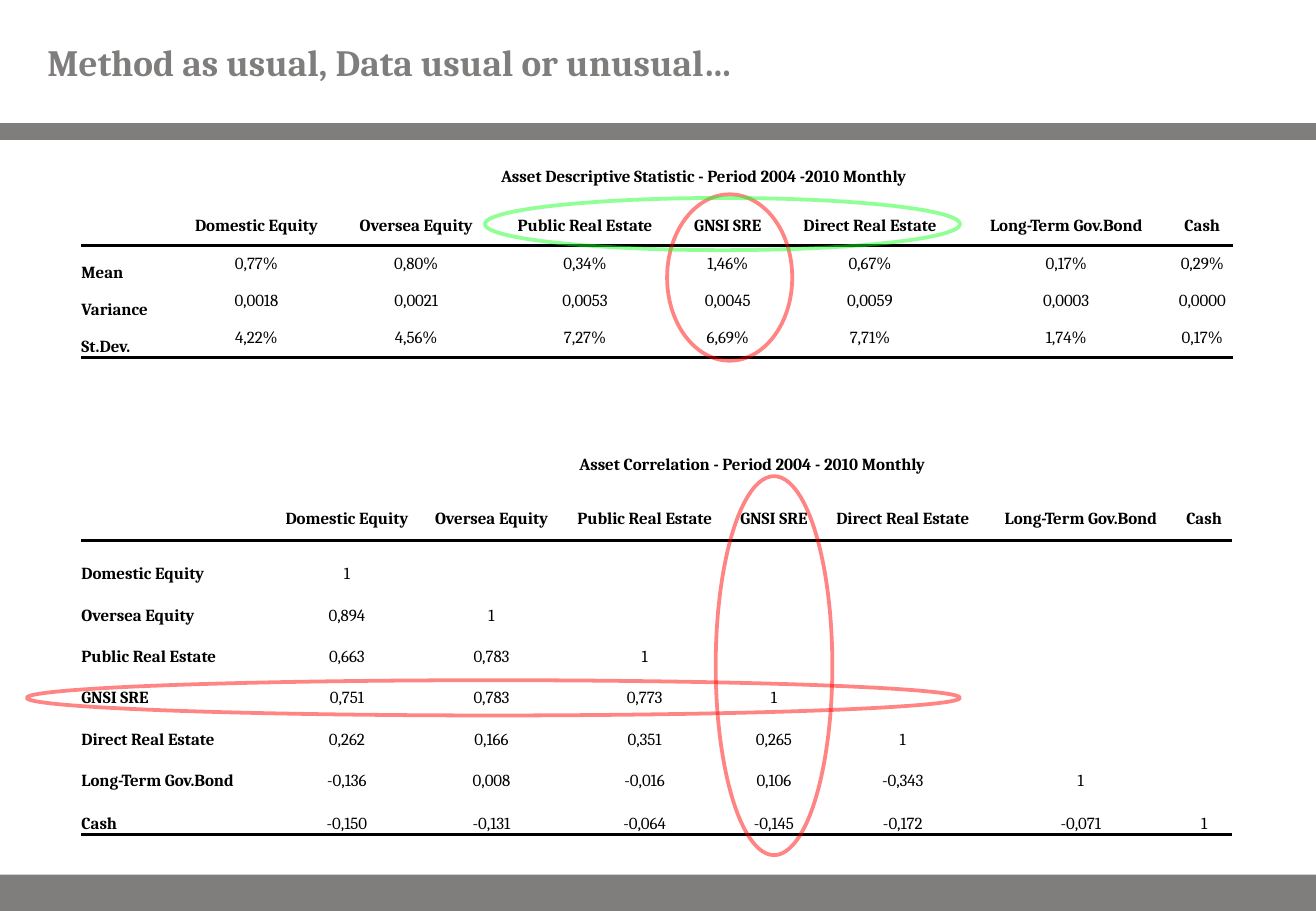
"""Build a slide with two asset statistics tables and highlighted entries."""
from lxml.etree import SubElement
from pptx import Presentation
from pptx.dml.color import RGBColor
from pptx.enum.shapes import MSO_CONNECTOR as Connector, MSO_SHAPE as Shape
from pptx.enum.text import MSO_ANCHOR as Anchor, PP_ALIGN as Align
from pptx.oxml import parse_xml
from pptx.oxml.ns import nsdecls, qn
from pptx.util import Inches, Pt

WIDTH, HEIGHT = 10.83, 7.5
FONT, GREY, BLACK, RED, GREEN = "Cambria", "7F7E7D", "000000", "FF0000", "19FF22"
NO_STYLE = "{2D5ABB26-0587-4C30-8999-92F81FD0307C}"
ASSETS = ["Domestic Equity", "Oversea Equity", "Public Real Estate", "GNSI SRE",
          "Direct Real Estate", "Long-Term Gov.Bond", "Cash"]


def paint(color, hex_string):
    color.rgb = RGBColor.from_string(hex_string)


def format_text(frame, size, color, bold, align):
    para = frame.paragraphs[0]
    para.alignment = align
    for font in [para.font] + [span.font for span in para.runs]:
        font.name, font.size, font.bold = FONT, Pt(size), bold
        paint(font.color, color)


deck = Presentation()
deck.slide_width, deck.slide_height = Inches(WIDTH), Inches(HEIGHT)
page = deck.slides.add_slide(deck.slide_layouts[5])

rule = page.shapes.add_connector(
    Connector.STRAIGHT, 0, Inches(1.08), Inches(WIDTH), Inches(1.08))
rule.line.width = Pt(10)
paint(rule.line.color, GREY)
SubElement(rule._element.spPr, qn("a:effectLst"))

footer = page.shapes.add_shape(
    Shape.RECTANGLE, 0, Inches(7.2), Inches(WIDTH), Inches(HEIGHT - 7.2))
footer.shadow.inherit = False
footer.fill.solid()
paint(footer.fill.fore_color, GREY)
footer.line.fill.background()

title = page.shapes.title
title.left, title.top, title.width, title.height = 0, 0, Inches(WIDTH), Inches(1.01)
frame = title.text_frame
frame.text = "Method as usual, Data usual or unusual…"
frame.word_wrap = True
frame.vertical_anchor = Anchor.MIDDLE
frame.margin_left = frame.margin_right = Inches(0.39)
frame.margin_top = frame.margin_bottom = 0
format_text(frame, 22, GREY, True, Align.LEFT)

statistics = [
    ["Mean", "0,77%", "0,80%", "0,34%", "1,46%", "0,67%", "0,17%", "0,29%"],
    ["Variance", "0,0018", "0,0021", "0,0053", "0,0045", "0,0059", "0,0003", "0,0000"],
    ["St.Dev.", "4,22%", "4,56%", "7,27%", "6,69%", "7,71%", "1,74%", "0,17%"],
]
correlations = [
    [],
    ["0,894"],
    ["0,663", "0,783"],
    ["0,751", "0,783", "0,773"],
    ["0,262", "0,166", "0,351", "0,265"],
    ["-0,136", "0,008", "-0,016", "0,106", "-0,343"],
    ["-0,150", "-0,131", "-0,064", "-0,145", "-0,172", "-0,071"],
]
correlation_rows = [[asset, *values, "1"] for asset, values in zip(ASSETS, correlations)]

tables = [
    ("Asset Descriptive Statistic - Period 2004 -2010 Monthly", 1.38, statistics,
     [0.76, 1.36, 1.27, 1.51, 0.84, 1.5, 1.73, 0.51],
     [0.33, 0.31, 0.31, 0.3, 0.31], Anchor.MIDDLE),
    ("Asset Correlation - Period 2004 - 2010 Monthly", 3.75, correlation_rows,
     [1.57, 1.23, 1.15, 1.37, 0.76, 1.36, 1.57, 0.46],
     [0.34, 0.36, 0.36] + [0.34] * 5 + [0.36], Anchor.BOTTOM),
]
for caption, top, body, widths, heights, value_anchor in tables:
    rows = [["", caption], ["", *ASSETS], *body]
    table = page.shapes.add_table(
        len(rows), len(widths), Inches(0.67), Inches(top),
        Inches(sum(widths)), Inches(sum(heights))).table
    table.first_row = table.horz_banding = False
    table._tbl.tblPr.find(qn("a:tableStyleId")).text = NO_STYLE
    for column, width in zip(table.columns, widths):
        column.width = Inches(width)
    for row, height in zip(table.rows, heights):
        row.height = Inches(height)
    table.cell(0, 1).merge(table.cell(0, len(widths) - 1))

    for r, texts in enumerate(rows):
        for c in range(len(widths)):
            cell = table.cell(r, c)
            cell.text = texts[c] if c < len(texts) else ""
            cell.margin_left = cell.margin_right = cell.margin_top = cell.margin_bottom = 0
            cell.fill.background()
            if r < 2:
                cell.vertical_anchor = [Anchor.TOP, Anchor.MIDDLE][r]
            else:
                cell.vertical_anchor = value_anchor if c else Anchor.BOTTOM
            format_text(cell.text_frame, 10, BLACK, r < 2 or c == 0,
                        Align.CENTER if c else Align.LEFT)
            if r in (1, len(rows) - 1):
                cell._tc.get_or_add_tcPr().insert(0, parse_xml(
                    f'<a:lnB {nsdecls("a")} w="{Pt(2)}"><a:solidFill>'
                    f'<a:srgbClr val="{BLACK}"/></a:solidFill></a:lnB>'))

highlights = [
    (5.49, 1.6, 1.03, 1.37, RED),
    (5.89, 3.92, 0.96, 3.12, RED),
    (0.22, 5.6, 7.68, 0.29, RED),
    (3.99, 1.63, 3.91, 0.43, GREEN),
]
for left, top, width, height, color in highlights:
    ring = page.shapes.add_shape(
        Shape.OVAL, Inches(left), Inches(top), Inches(width), Inches(height))
    ring.shadow.inherit = False
    ring.fill.background()
    ring.line.width = Pt(2.25)
    paint(ring.line.color, color)
    tint = ring.line._ln.find(".//" + qn("a:srgbClr"))
    SubElement(tint, qn("a:alpha"), val="47000")

deck.save("out.pptx")
